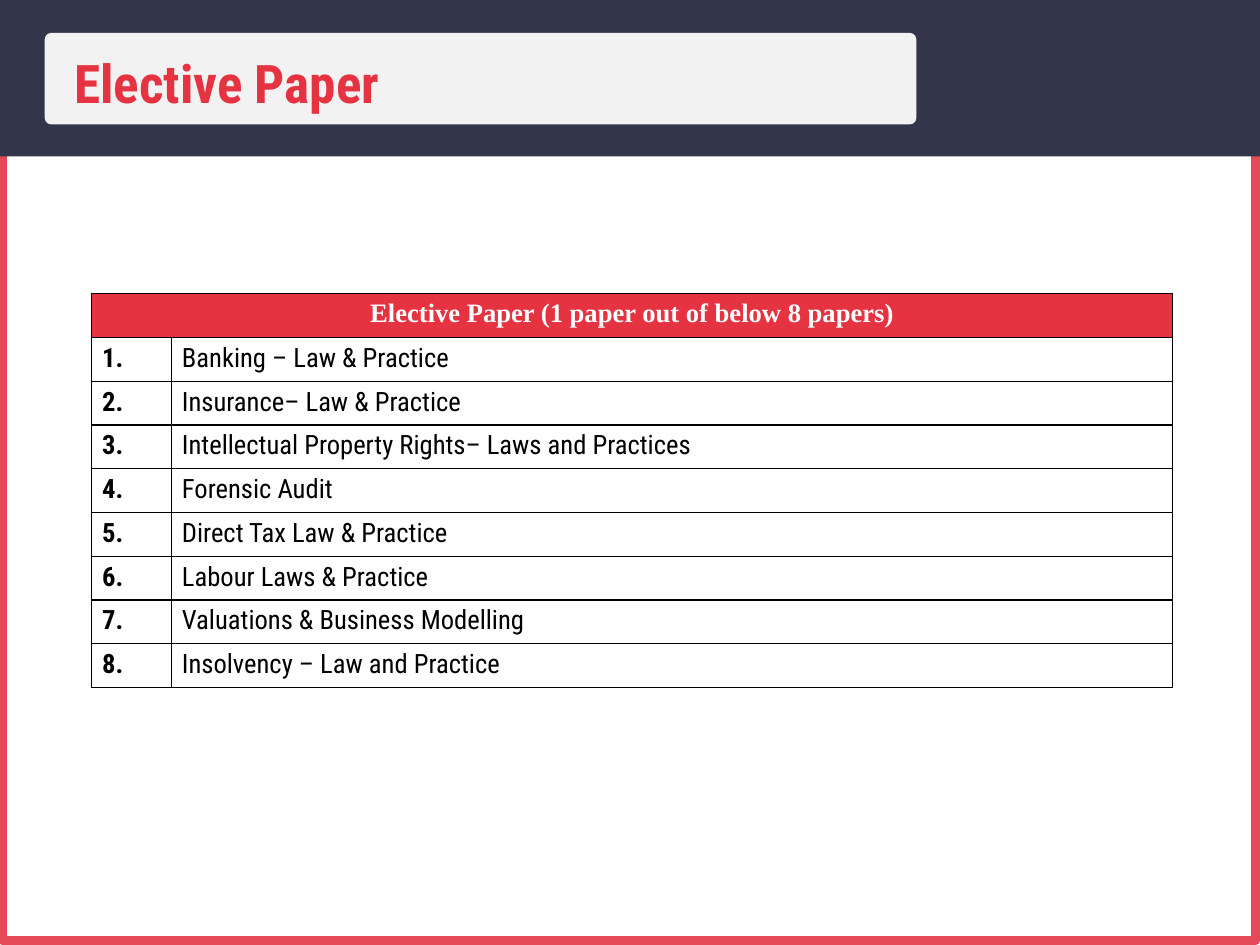
from dataclasses import dataclass

from lxml.etree import SubElement
from pptx import Presentation
from pptx.dml.color import RGBColor
from pptx.enum.shapes import MSO_SHAPE as Shape
from pptx.enum.text import MSO_ANCHOR as Anchor, MSO_AUTO_SIZE as AutoSize, PP_ALIGN as Align
from pptx.oxml.ns import qn
from pptx.util import Inches, Pt

COLUMNS, ROWS = 80, 60
PAPERS = [
    "Banking – Law & Practice",
    "Insurance– Law & Practice",
    "Intellectual Property Rights– Laws and Practices",
    "Forensic Audit",
    "Direct Tax Law & Practice",
    "Labour Laws & Practice",
    "Valuations & Business Modelling",
    "Insolvency – Law and Practice",
]


@dataclass(frozen=True)
class Theme:
    accent: str = "E53341"
    frame: str = "E54957"
    header: str = "33354A"
    plate: str = "F2F2F2"
    ink: str = "000000"
    paper: str = "FFFFFF"
    sans: str = "Roboto Condensed"
    serif: str = "Times New Roman"
    title_size: int = 36
    table_size: int = 18
    frame_width: int = 6
    border_width: int = 1


def write(text_frame, text, *, font, size, color, bold=False, align=Align.LEFT):
    paragraph = text_frame.paragraphs[0]
    paragraph.alignment = align
    run = paragraph.add_run()
    run.text = text
    run.font.name = font
    run.font.size = Pt(size)
    run.font.bold = bold
    run.font.color.rgb = RGBColor.from_string(color)
    return paragraph


class SlideBuilder:
    def __init__(self, deck, theme):
        self.theme = theme
        self.column = deck.slide_width / COLUMNS
        self.row = deck.slide_height / ROWS
        self.slide = deck.slides.add_slide(deck.slide_layouts[5])

    def place(self, left, top, width, height):
        """Turn grid columns and rows into slide lengths."""
        return (round(left * self.column), round(top * self.row),
                round(width * self.column), round(height * self.row))

    def panel(self, kind, box, fill=None, line=None, corner=None):
        panel = self.slide.shapes.add_shape(kind, *self.place(*box))
        panel.shadow.inherit = False
        if corner is not None:
            panel.adjustments[0] = corner
        if fill:
            panel.fill.solid()
            panel.fill.fore_color.rgb = RGBColor.from_string(fill)
        else:
            panel.fill.background()
        if line:
            panel.line.color.rgb = RGBColor.from_string(line)
            panel.line.width = Pt(self.theme.frame_width)
        else:
            panel.line.fill.background()

    def title(self, text, box):
        heading = self.slide.shapes.title
        heading.left, heading.top, heading.width, heading.height = self.place(*box)
        heading.element.getparent().append(heading.element)  # bring in front of the plate
        frame = heading.text_frame
        frame.word_wrap = True
        frame.auto_size = AutoSize.SHAPE_TO_FIT_TEXT
        frame.vertical_anchor = Anchor.TOP
        paragraph = write(frame, text, font=self.theme.sans, size=self.theme.title_size,
                          color=self.theme.accent, bold=True, align=Align.JUSTIFY)
        paragraph.line_spacing = 1.07
        paragraph.space_before = Pt(0)
        paragraph.space_after = Pt(7.1)

    def border(self, cell):
        properties = cell._tc.get_or_add_tcPr()
        for position, side in enumerate(("lnL", "lnR", "lnT", "lnB")):
            edge = properties.makeelement(qn(f"a:{side}"), {"w": str(Pt(self.theme.border_width))})
            properties.insert(position, edge)
            SubElement(SubElement(edge, qn("a:solidFill")), qn("a:srgbClr"), val=self.theme.ink)

    def numbered_table(self, header, entries, box, number_width):
        theme = self.theme
        left, top, width, height = self.place(*box)
        row_count = len(entries) + 1
        table = self.slide.shapes.add_table(row_count, 2, left, top, width, height).table
        table.horz_banding = False
        table.columns[0].width = round(number_width * self.column)
        table.columns[1].width = width - table.columns[0].width
        for row in table.rows:
            row.height = height // row_count
        for cell in table.iter_cells():
            cell.fill.background()
            self.border(cell)

        heading = table.cell(0, 0)
        heading.merge(table.cell(0, 1))
        heading.fill.solid()
        heading.fill.fore_color.rgb = RGBColor.from_string(theme.accent)
        write(heading.text_frame, header, font=theme.serif, size=theme.table_size,
              color=theme.paper, bold=True, align=Align.CENTER)
        body = dict(font=theme.sans, size=theme.table_size, color=theme.ink)
        for number, entry in enumerate(entries, 1):
            write(table.cell(number, 0).text_frame, f"{number}.", bold=True, **body)
            write(table.cell(number, 1).text_frame, entry, **body)


def main():
    deck = Presentation()
    deck.slide_width, deck.slide_height = Inches(11.84), Inches(8.88)
    theme = Theme()
    page = SlideBuilder(deck, theme)
    page.panel(Shape.RECTANGLE, (0.14, 0.2, 79.59, 59.53), line=theme.frame)
    page.panel(Shape.RECTANGLE, (0, 0, COLUMNS, 9.93), fill=theme.header)
    page.panel(Shape.ROUNDED_RECTANGLE, (2.84, 2.09, 55.34, 5.81), fill=theme.plate, corner=0.07)
    page.title("Elective Paper", (4.05, 2.57, 46.28, 4.73))
    page.numbered_table("Elective Paper (1 paper out of below 8 papers)", PAPERS,
                        (5.81, 18.65, 68.65, 25), number_width=5.07)
    deck.save("out.pptx")


if __name__ == "__main__":
    main()
